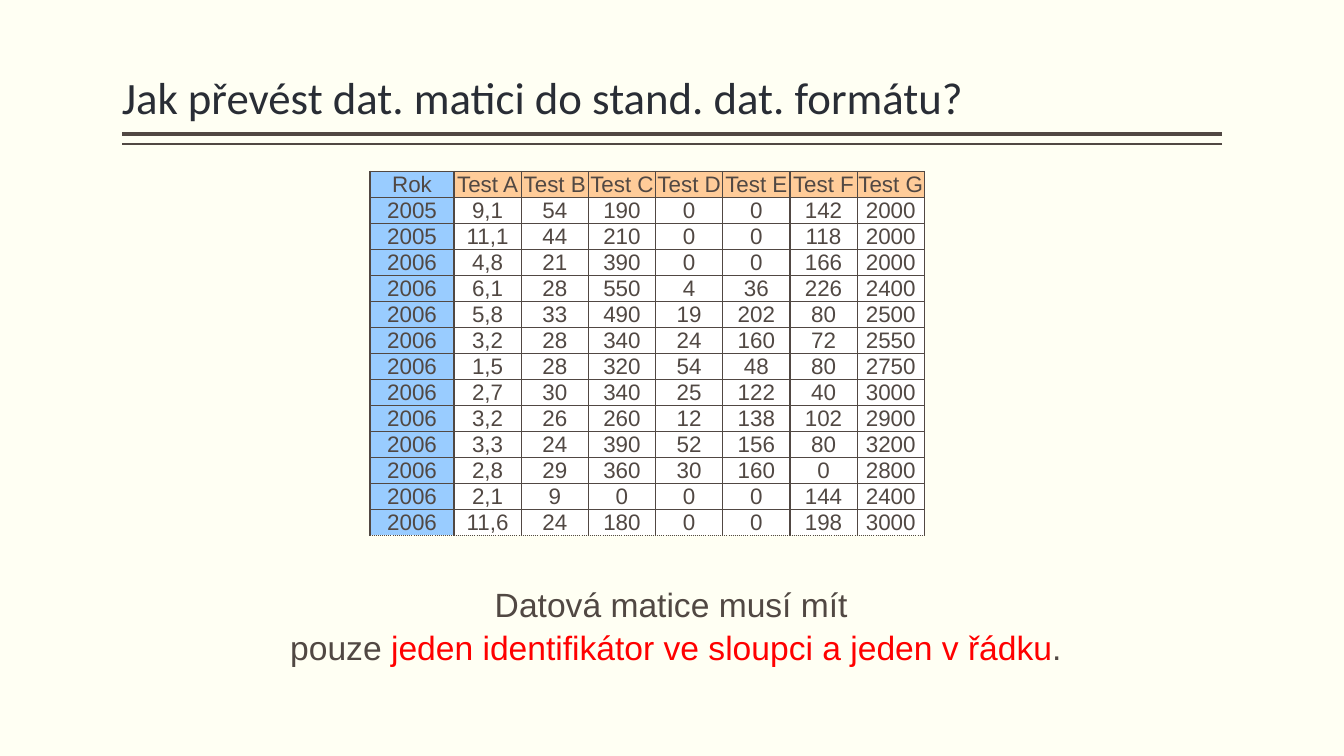
import pptx
import pptx.dml.color
import pptx.enum.dml
import pptx.enum.shapes
import pptx.enum.text
import pptx.oxml.ns
import pptx.util
from lxml import etree

INK = "514843"
TITLE_INK = "292D35"
RED = "FF0000"
PAPER = "FFFFF3"
BLUE = "99CCFF"
ORANGE = "FFCC99"
WHITE = "FFFFFF"

HEADINGS = ["Rok"] + [f"Test {letter}" for letter in "ABCDEFG"]
MEASUREMENTS = """
2005 9,1 54 190 0 0 142 2000
2005 11,1 44 210 0 0 118 2000
2006 4,8 21 390 0 0 166 2000
2006 6,1 28 550 4 36 226 2400
2006 5,8 33 490 19 202 80 2500
2006 3,2 28 340 24 160 72 2550
2006 1,5 28 320 54 48 80 2750
2006 2,7 30 340 25 122 40 3000
2006 3,2 26 260 12 138 102 2900
2006 3,3 24 390 52 156 80 3200
2006 2,8 29 360 30 160 0 2800
2006 2,1 9 0 0 0 144 2400
2006 11,6 24 180 0 0 198 3000
"""


def points(*lengths):
    return [pptx.util.Pt(length) for length in lengths]


def paint(target, colour):
    if hasattr(target, "solid"):
        target.solid()
        target = target.fore_color
    target.rgb = pptx.dml.color.RGBColor.from_string(colour)


def style_span(span, size, colour, font="Arial"):
    span.font.name = font
    span.font.size = pptx.util.Pt(size)
    paint(span.font.color, colour)


def set_margins(holder, left, top, right, bottom):
    (holder.margin_left, holder.margin_top,
     holder.margin_right, holder.margin_bottom) = points(left, top, right, bottom)


def add_title(page, text, left, top, width, height):
    title = page.shapes.title
    title.left, title.top, title.width, title.height = points(left, top, width, height)
    frame = title.text_frame
    frame.text = text
    frame.word_wrap = True
    frame.auto_size = pptx.enum.text.MSO_AUTO_SIZE.NONE
    frame.vertical_anchor = pptx.enum.text.MSO_ANCHOR.BOTTOM
    set_margins(frame, 0, 3.6, 0, 3.6)
    para = frame.paragraphs[0]
    para.alignment = pptx.enum.text.PP_ALIGN.LEFT
    para.line_spacing = 0.9
    style_span(para.runs[0], 32, TITLE_INK, "Calibri")

    bottom = top + height
    for offset, weight in ((3.6, 3), (10.8, 1)):
        rule = page.shapes.add_connector(
            pptx.enum.shapes.MSO_CONNECTOR.STRAIGHT,
            *points(left + width, bottom + offset, left, bottom + offset))
        paint(rule.line.fill, INK)
        rule.line.width = pptx.util.Pt(weight)
        etree.SubElement(rule.element.spPr, pptx.oxml.ns.qn("a:effectLst"))


def add_borders(cell, bottom_dash):
    qn = pptx.oxml.ns.qn
    properties = cell._tc.get_or_add_tcPr()
    for side in "LRTB":
        border = etree.SubElement(properties, qn(f"a:ln{side}"), w=str(pptx.util.Pt(1)))
        fill = etree.SubElement(border, qn("a:solidFill"))
        etree.SubElement(fill, qn("a:srgbClr"), val=INK)
        dash = bottom_dash if side == "B" else "solid"
        etree.SubElement(border, qn("a:prstDash"), val=dash)


def add_matrix(page, rows, left, top, width, height):
    first_width = 60
    other_width = (width - first_width) / (len(rows[0]) - 1)
    table = page.shapes.add_table(
        len(rows), len(rows[0]), *points(left, top, width, height)).table
    table.first_row = table.horz_banding = False
    for index, column in enumerate(table.columns):
        column.width = pptx.util.Pt(other_width if index else first_width)
    for row in table.rows:
        row.height = pptx.util.Pt(height / len(rows))
    for row_index, values in enumerate(rows):
        for column_index, value in enumerate(values):
            cell = table.cell(row_index, column_index)
            cell.text_frame.text = value
            cell.vertical_anchor = pptx.enum.text.MSO_ANCHOR.MIDDLE
            set_margins(cell, 0.7, 0.7, 0.7, 0)
            para = cell.text_frame.paragraphs[0]
            para.alignment = pptx.enum.text.PP_ALIGN.CENTER
            style_span(para.runs[0], 16, INK)
            add_borders(cell, "sysDot" if row_index == len(rows) - 1 else "solid")
            if column_index == 0:
                paint(cell.fill, BLUE)
            else:
                paint(cell.fill, WHITE if row_index else ORANGE)


def add_conclusion(page, lines, left, top, width, height):
    box = page.shapes.add_textbox(*points(left, top, width, height))
    frame = box.text_frame
    frame.word_wrap = True
    for index, line in enumerate(lines):
        para = frame.add_paragraph() if index else frame.paragraphs[0]
        para.alignment = pptx.enum.text.PP_ALIGN.CENTER
        para.line_spacing = 1.06
        for text, colour in line:
            span = para.add_run()
            span.text = text
            style_span(span, 24, colour)


def main():
    deck = pptx.Presentation()
    deck.slide_width, deck.slide_height = points(960, 540)
    page = deck.slides.add_slide(deck.slide_layouts[5])
    paint(page.background.fill, PAPER)
    add_title(page, "Jak převést dat. matici do stand. dat. formátu?",
              87, 5.8, 786, 86.4)
    rows = [HEADINGS] + [line.split() for line in MEASUREMENTS.strip().splitlines()]
    add_matrix(page, rows, 264.3, 122.4, 396, 260)
    add_conclusion(page, [
        [("Datová matice musí mít ", INK)],
        [("pouze ", INK),
         ("jeden identifikátor ve sloupci a jeden v řádku", RED),
         (".", INK)],
    ], 179.3, 411.8, 607, 65.5)
    deck.save("out.pptx")


if __name__ == "__main__":
    main()
